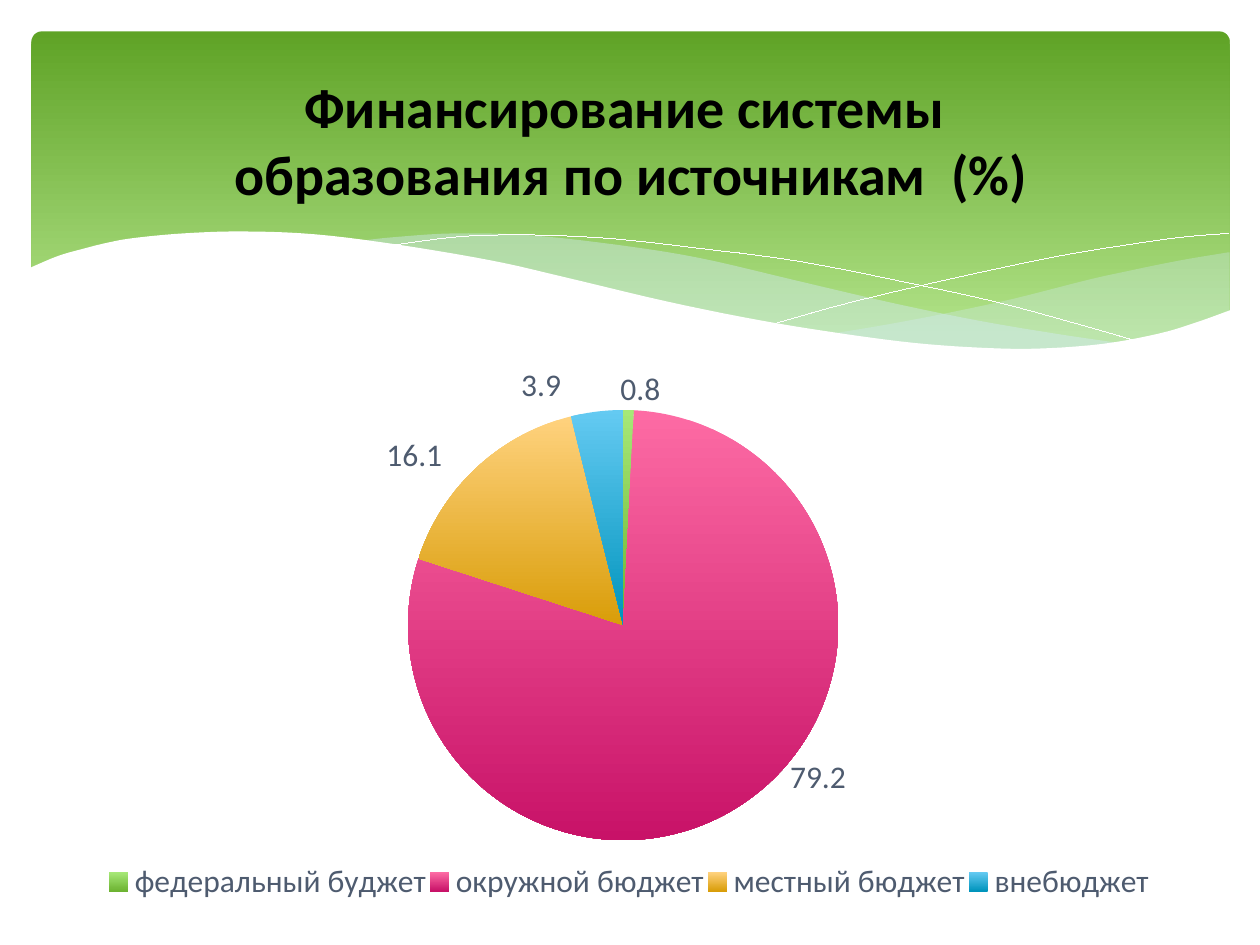
from lxml.etree import SubElement
from pptx import Presentation
from pptx.chart.data import CategoryChartData
from pptx.dml.color import RGBColor
from pptx.enum.chart import XL_CHART_TYPE as ChartType, XL_LABEL_POSITION as LabelPos, XL_LEGEND_POSITION as LegendPos
from pptx.enum.shapes import MSO_SHAPE as Shape
from pptx.enum.text import MSO_ANCHOR as Anchor, PP_ALIGN as Align
from pptx.oxml import parse_xml
from pptx.oxml.ns import nsdecls, qn
from pptx.util import Inches, Pt

WIDTH, HEIGHT = Inches(10), Inches(7.5)
FONT = "Calibri"
WHITE = RGBColor(0xFF, 0xFF, 0xFF)
BLACK = RGBColor(0, 0, 0)
SLATE = RGBColor(0x4E, 0x5B, 0x6F)
MIST = RGBColor(0xD6, 0xEC, 0xFF)
BANNER_TOP = RGBColor(0x5F, 0xA3, 0x26)
BANNER_BOTTOM = RGBColor(0xB2, 0xE3, 0x89)
GREENS = RGBColor(0xA6, 0xE8, 0x77), RGBColor(0x6D, 0xB3, 0x32)
PINKS = RGBColor(0xFD, 0x6B, 0xA4), RGBColor(0xC8, 0x12, 0x68)
AMBERS = RGBColor(0xFF, 0xD2, 0x7E), RGBColor(0xD9, 0x9D, 0x09)
BLUES = RGBColor(0x64, 0xCA, 0xF2), RGBColor(0x00, 0x94, 0xBC)

BANNER_BOX = (2.5, 3.33, 95.1, 36)
TITLE_BOX = (5.1, 4.8, 90, 20)
CHART_BOX = (2.8, 36.8, 92.4, 62.8)

RIGHT_VEIL = [
    [(97.5, 26.7), (93.5, 27.6), (89.1, 28.8), (86.1, 29.7), (80.5, 31.6), (75.3, 33.1), (70.6, 34.3), (66.1, 35.3)],
    [(66.1, 35.3), (69.1, 35.8), (73.2, 36.5), (76.9, 36.9), (81.4, 37.1), (85.4, 36.8), (88.9, 36.3), (92.1, 35.5),
     (94.9, 34.3), (97.6, 32.9)],
    [(97.6, 26.7)],
]
CENTRE_VEIL = [
    [(28.6, 25.5), (31.3, 25.1), (36.1, 24.7), (42, 24.9), (48.9, 25.9), (55.5, 27.3), (62.9, 29.6), (70.6, 32),
     (77.5, 33.9), (83.7, 35.3), (89.3, 36.4)],
    [(89.3, 36.4), (85.7, 36.8), (81.8, 37.1), (77.3, 36.9), (72.2, 36.5), (66.5, 35.5), (60.1, 34), (53, 32),
     (44.9, 29.6), (40.4, 28.1), (36.2, 27.1), (32.3, 26.3), (28.6, 25.5)],
]
FALLING_THREAD = [[(30.9, 26), (35.3, 25.2), (38.7, 24.9), (43.3, 24.9), (48.9, 25.3), (55.6, 26.3), (63.6, 27.7),
                   (72.7, 30.1), (79.5, 32.1), (86.9, 34.8), (90.7, 36.3)]]
RISING_THREAD = [[(61.3, 34.3), (67.2, 32.1), (74.8, 29.7), (83.6, 27.2), (89.5, 25.9), (93.8, 25.1), (97.5, 24.7)]]
WHITE_WAVE = [
    [(2.3, 28.4), (4.6, 27.1), (6.7, 26.3), (8.5, 25.7), (10.6, 25.2), (14.6, 24.7), (19.3, 24.5), (25, 24.8),
     (31.6, 25.9), (39.1, 27.6), (44.7, 29.3), (52.9, 31.9), (60.3, 33.9), (66.8, 35.3), (72.6, 36.3),
     (77.8, 36.8), (82.3, 36.9), (87.5, 36.4), (92, 35.3), (95, 34.1), (97.7, 32.8)],
    [(97.7, 43.9), (2.3, 43.9)],
]

SOURCES = [
    ("федеральный буджет", 0.8, GREENS, (0.01, 0.01)),
    ("окружной бюджет", 79.2, PINKS, (0.035, -0.085)),
    ("местный бюджет", 16.1, AMBERS, (-0.025, 0.02)),
    ("внебюджет", 3.9, BLUES, (-0.03, 0)),
]


def place(x, y):
    """Turn percentages of the slide into a position."""
    return round(WIDTH * x / 100), round(HEIGHT * y / 100)


def frame(box):
    """Turn a box in percentages of the slide into left, top, width, height."""
    return place(*box[:2]) + place(*box[2:])


def smooth(knots, steps=5):
    """Run a Catmull-Rom curve through the knots."""
    if len(knots) < 3:
        return knots
    padded = [knots[0], *knots, knots[-1]]
    curve = [knots[0]]
    for a, b, c, d in zip(padded, padded[1:], padded[2:], padded[3:]):
        for step in range(1, steps + 1):
            t = step / steps
            curve.append(tuple(
                (2 * q + (r - p) * t + (2 * p - 5 * q + 4 * r - s) * t**2 + (3 * q - p - 3 * r + s) * t**3) / 2
                for p, q, r, s in zip(a, b, c, d)))
    return curve


def fade(fill, start, end, end_share=1):
    """Fill with a gradient running from top to bottom."""
    fill.gradient()
    fill.gradient_angle = 270
    first, last = fill.gradient_stops
    first.color.rgb, last.color.rgb = start, end
    first.position, last.position = 0, end_share


def draw_wave(slide, sections, color, opacity=100, closed=True):
    """Draw a curved surface, or an open hairline, across the slide."""
    points = [place(*point) for section in sections for point in smooth(section)]
    builder = slide.shapes.build_freeform(*points[0])
    builder.add_line_segments(points[1:], close=closed)
    wave = builder.convert_to_shape()
    wave.shadow.inherit = False
    if not closed:
        wave.fill.background()
        wave.line.color.rgb = color
        wave.line._get_or_add_ln().set("w", "0")
        return
    wave.line.fill.background()
    wave.fill.solid()
    wave.fill.fore_color.rgb = color
    if opacity < 100:
        tint = wave.fill._xPr.find(qn("a:solidFill"))[0]
        SubElement(tint, qn("a:alpha"), val=str(opacity * 1000))


def draw_banner(slide, box):
    """Draw the green banner with its waves."""
    banner = slide.shapes.add_shape(Shape.ROUNDED_RECTANGLE, *frame(box))
    banner.adjustments[0] = 0.03
    banner.shadow.inherit = False
    banner.line.fill.background()
    fade(banner.fill, BANNER_TOP, BANNER_BOTTOM, 0.9)
    draw_wave(slide, RIGHT_VEIL, MIST, 29)
    draw_wave(slide, CENTRE_VEIL, MIST, 40)
    for thread in (FALLING_THREAD, RISING_THREAD):
        draw_wave(slide, thread, WHITE, closed=False)
    draw_wave(slide, WHITE_WAVE, WHITE)


def write_title(slide, box):
    """Write the two centred title lines."""
    title = slide.shapes.add_textbox(*frame(box)).text_frame
    title.word_wrap = True
    title.vertical_anchor = Anchor.MIDDLE
    title.text = "Финансирование системы \nобразования по источникам  (%)"
    for line in title.paragraphs:
        line.alignment = Align.CENTER
        style_font(line.font, 32, BLACK)
        line.font.bold = True


def style_font(font, size, color):
    """Set typeface, size and colour."""
    font.name, font.size = FONT, Pt(size)
    font.color.rgb = color


def set_layout(part, index, **settings):
    """Give a chart part a manual layout."""
    for layout in part.findall(qn("c:layout")):
        part.remove(layout)
    values = "".join(f'<c:{key} val="{value}"/>' for key, value in settings.items())
    part.insert(index, parse_xml(f'<c:layout {nsdecls("c")}><c:manualLayout>{values}</c:manualLayout></c:layout>'))


def draw_funding_pie(slide, box):
    """Chart the shares of each funding source."""
    data = CategoryChartData()
    data.categories = [source[0] for source in SOURCES]
    data.add_series("Series 1", [source[1] for source in SOURCES])
    chart = slide.shapes.add_chart(ChartType.PIE, *frame(box), data).chart
    chart.has_title = False
    style_font(chart.font, 10, BLACK)
    chart.has_legend = True
    chart.legend.position = LegendPos.BOTTOM
    chart.legend.include_in_layout = False
    style_font(chart.legend.font, 18, SLATE)

    space = chart._chartSpace
    set_layout(space.chart.plotArea, 0, layoutTarget="inner", xMode="edge", yMode="edge",
               x=0.32, y=0.105, w=0.37, h=0.725)
    set_layout(space.chart.find(qn("c:legend")), 1, xMode="edge", yMode="edge", x=0.06, y=0.86, w=0.9, h=0.08)

    pie = chart.plots[0]
    pie.vary_by_categories = True
    pie.has_data_labels = True
    pie.data_labels.show_value = True
    pie.data_labels.position = LabelPos.OUTSIDE_END
    style_font(pie.data_labels.font, 18, SLATE)
    for index, (_, _, colors, (shift_x, shift_y)) in enumerate(SOURCES):
        wedge = pie.series[0].points[index]
        fade(wedge.format.fill, *colors)
        wedge.format.line.fill.background()
        label = wedge.data_label
        style_font(label.font, 18, SLATE)
        label.position = LabelPos.OUTSIDE_END
        set_layout(label._get_or_add_dLbl(), 1, x=shift_x, y=shift_y)
    for leader in space.iter(qn("c:showLeaderLines")):
        leader.set("val", "0")


def main():
    """Build the funding slide."""
    deck = Presentation()
    deck.slide_width, deck.slide_height = WIDTH, HEIGHT
    slide = deck.slides.add_slide(deck.slide_layouts[6])
    draw_banner(slide, BANNER_BOX)
    write_title(slide, TITLE_BOX)
    draw_funding_pie(slide, CHART_BOX)
    deck.save("out.pptx")


if __name__ == "__main__":
    main()
